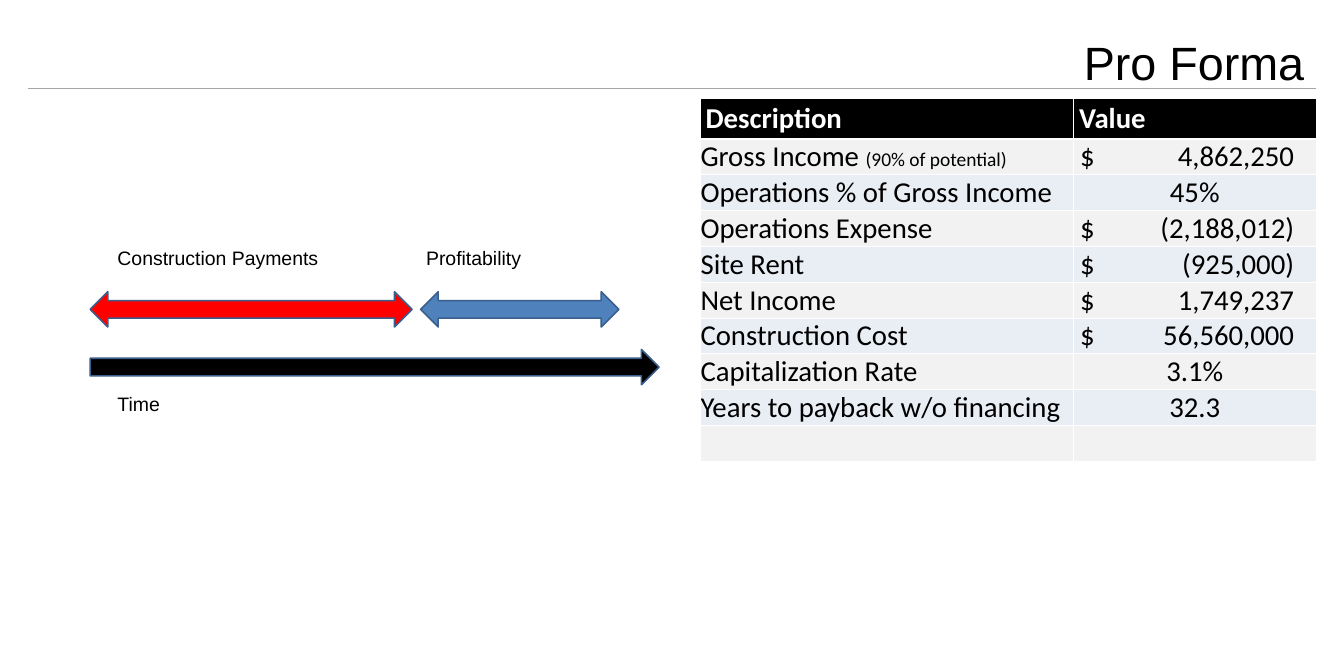
from lxml.etree import SubElement
from pptx import Presentation
from pptx.dml.color import RGBColor
from pptx.enum.shapes import MSO_CONNECTOR, MSO_SHAPE
from pptx.enum.text import MSO_ANCHOR, MSO_AUTO_SIZE, PP_ALIGN
from pptx.oxml.ns import qn
from pptx.util import Inches, Pt

WHITE, BLACK, GRAY, PALE_BLUE = "FFFFFF", "000000", "F2F2F2", "E9EDF4"
HEADER = ("Description", "Value")
ROWS = [
    ("Gross Income ", "$\t4,862,250"),
    ("Operations % of Gross Income", "45%"),
    ("Operations Expense", "$\t(2,188,012)"),
    ("Site Rent", "$\t(925,000)"),
    ("Net Income", "$\t1,749,237"),
    ("Construction Cost", "$\t56,560,000"),
    ("Capitalization Rate", "3.1%"),
    ("Years to payback w/o financing", "32.3"),
    ("", ""),
]


def rgb(color):
    return RGBColor.from_string(color)


def box(*lengths):
    return [Inches(n) for n in lengths]


def set_attrs(target, values):
    for name, value in values.items():
        setattr(target, name, value)


class ProFormaSlide:
    """Holds the text styles and the slide being built."""

    styles = {
        "title": {"name": "Arial", "size": Pt(60), "bold": False},
        "label": {"name": "Arial", "size": Pt(25), "bold": False},
        "header": {"name": "Calibri", "size": Pt(37), "bold": True},
        "body": {"name": "Calibri", "size": Pt(37), "bold": False},
        "note": {"name": "Calibri", "size": Pt(25), "bold": False},
    }

    def __init__(self, prs):
        self.s = prs.slides.add_slide(prs.slide_layouts[5])

    def add_text(self, p, text, style, color=BLACK):
        r = p.add_run()
        r.text = text
        set_attrs(r.font, self.styles[style])
        r.font.color.rgb = rgb(color)

    def title(self, text, left, top, width, height):
        sp = self.s.shapes.title
        sp.left, sp.top, sp.width, sp.height = box(left, top, width, height)
        tf = sp.text_frame
        set_attrs(tf, {"auto_size": MSO_AUTO_SIZE.NONE, "word_wrap": True,
                       "vertical_anchor": MSO_ANCHOR.BOTTOM,
                       "margin_left": Inches(0.21), "margin_right": Inches(0.21),
                       "margin_top": 0, "margin_bottom": 0})
        p = tf.paragraphs[0]
        p.alignment = PP_ALIGN.RIGHT
        self.add_text(p, text, "title")

    def rule(self, x1, y1, x2, y2):
        line = self.s.shapes.add_connector(MSO_CONNECTOR.STRAIGHT, *box(x1, y1, x2, y2))
        line.line.color.rgb = rgb("A6A6A6")
        line.line.width = Pt(0.75)
        SubElement(line._element.spPr, qn("a:effectLst"))

    def arrow(self, kind, fill, left, top, width, height=0.63):
        sp = self.s.shapes.add_shape(kind, *box(left, top, width, height))
        sp.shadow.inherit = False
        sp.fill.solid()
        sp.fill.fore_color.rgb = rgb(fill)
        sp.line.color.rgb = rgb("3A5F8C")
        sp.line.width = Pt(2)

    def label(self, text, left, top, width, height=0.52):
        tf = self.s.shapes.add_textbox(*box(left, top, width, height)).text_frame
        tf.word_wrap = True
        self.add_text(tf.paragraphs[0], text, "label")

    def cell_look(self, cell, fill, top=1, bottom=1):
        """Set the white borders, in points, and the fill of a cell."""
        tcPr = cell._tc.get_or_add_tcPr()
        for side, width in {"L": 1, "R": 1, "T": top, "B": bottom}.items():
            ln = SubElement(tcPr, qn(f"a:ln{side}"), w=str(Pt(width)))
            SubElement(SubElement(ln, qn("a:solidFill")), qn("a:srgbClr"), val=WHITE)
        cell.fill.solid()
        cell.fill.fore_color.rgb = rgb(fill)

    def body_cell(self, cell, text, is_value):
        set_attrs(cell, {"vertical_anchor": MSO_ANCHOR.BOTTOM, "margin_left": Inches(0.01),
                         "margin_right": Inches(0.01), "margin_top": Inches(0.01),
                         "margin_bottom": 0})
        p = cell.text_frame.paragraphs[0]
        if "\t" in text:
            cell.margin_left = Inches(0.12)
            tabs = SubElement(p._p.get_or_add_pPr(), qn("a:tabLst"))
            SubElement(tabs, qn("a:tab"), pos=str(Inches(3.82)), algn="r")
        elif is_value:
            p.alignment = PP_ALIGN.CENTER
        if text:
            self.add_text(p, text, "body")

    def table(self, header, rows, left, top, col_widths, header_height, row_height):
        height = header_height + row_height * len(rows)
        frame = self.s.shapes.add_table(len(rows) + 1, len(header),
                                        *box(left, top, sum(col_widths), height))
        tbl = frame.table
        for col, width in zip(tbl.columns, col_widths):
            col.width = Inches(width)
        for i, row in enumerate(tbl.rows):
            row.height = Inches(row_height if i else header_height)
        for j, text in enumerate(header):
            cell = tbl.cell(0, j)
            self.cell_look(cell, BLACK, bottom=3)
            self.add_text(cell.text_frame.paragraphs[0], text, "header", WHITE)
        for i, values in enumerate(rows, 1):
            for j, text in enumerate(values):
                cell = tbl.cell(i, j)
                self.cell_look(cell, GRAY if i % 2 else PALE_BLUE, top=3 if i == 1 else 1)
                self.body_cell(cell, text, is_value=j > 0)
        return tbl


def main():
    prs = Presentation()
    prs.slide_width, prs.slide_height = box(24, 12)
    s = ProFormaSlide(prs)

    s.rule(23.5, 1.58, 0.5, 1.58)
    s.title("Pro Forma", 12.5, 0.5, 11, 1.1)

    tbl = s.table(HEADER, ROWS, 12.5, 1.75, (6.67, 4.33), 0.71, 0.64)
    s.add_text(tbl.cell(1, 0).text_frame.paragraphs[0], "(90% of potential)", "note")

    s.arrow(MSO_SHAPE.LEFT_RIGHT_ARROW, "FF0000", 1.61, 5.21, 5.75)
    s.arrow(MSO_SHAPE.LEFT_RIGHT_ARROW, "4F81BD", 7.51, 5.21, 3.54)
    s.arrow(MSO_SHAPE.RIGHT_ARROW, BLACK, 1.61, 6.24, 10.16)
    s.label("Construction Payments", 2, 4.35, 5.04)
    s.label("Profitability", 7.51, 4.35, 3.62)
    s.label("Time", 2, 6.95, 5.04)

    prs.save("out.pptx")


if __name__ == "__main__":
    main()
